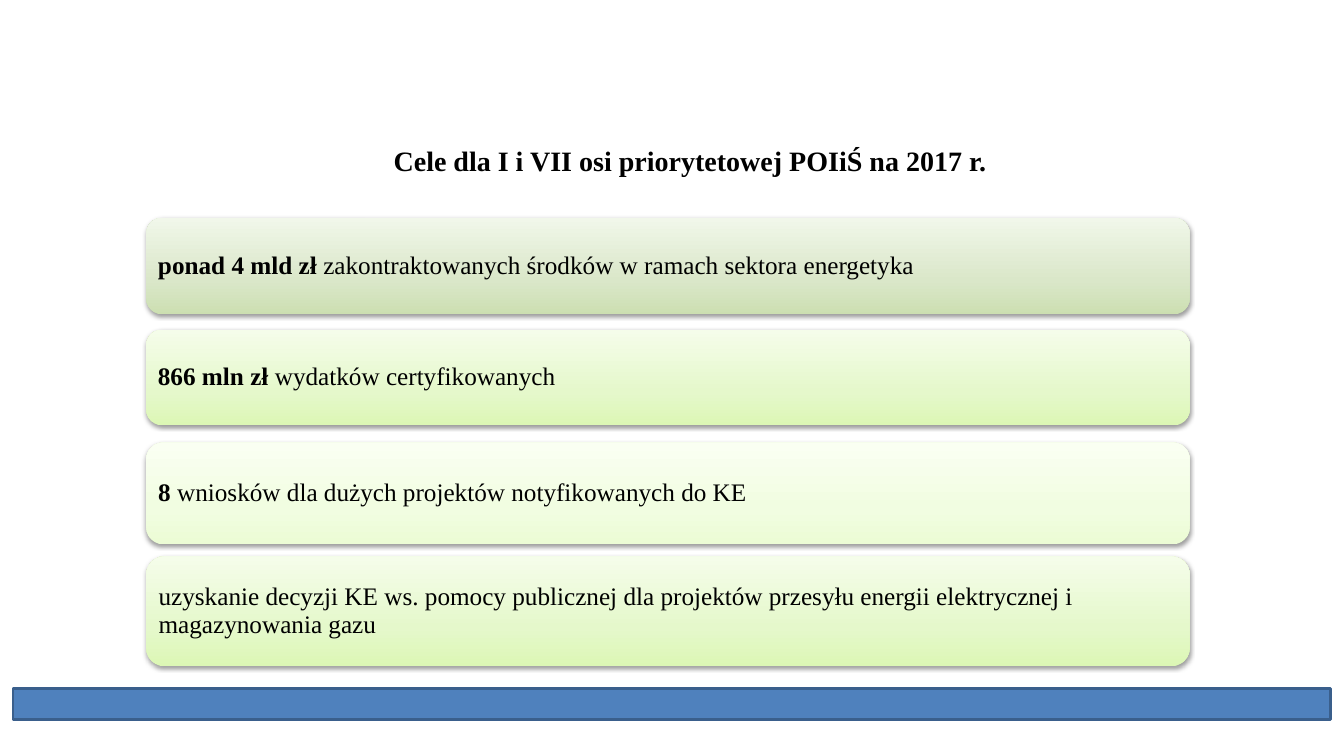
from copy import deepcopy

from lxml.etree import SubElement
from pptx import Presentation
from pptx.dml.color import RGBColor
from pptx.enum.shapes import MSO_SHAPE
from pptx.enum.text import MSO_ANCHOR, PP_ALIGN
from pptx.oxml.ns import qn
from pptx.util import Inches, Pt

FONT = "Times New Roman"
BLACK = RGBColor(0, 0, 0)
BLUE = RGBColor(0x4F, 0x81, 0xBD)
NAVY = RGBColor(0x3A, 0x5F, 0x8C)
SAGE = (RGBColor(0xCC, 0xDF, 0xB1), RGBColor(0xDA, 0xE7, 0xC9), RGBColor(0xF1, 0xF7, 0xEA))
LIME = (RGBColor(0xDC, 0xF7, 0xB5), RGBColor(0xE5, 0xF8, 0xCB), RGBColor(0xF5, 0xFD, 0xEA))
PALE = (RGBColor(0xEC, 0xFC, 0xD5), RGBColor(0xF1, 0xFD, 0xE1), RGBColor(0xFA, 0xFF, 0xF2))

GOALS = [
    (2.16, 0.96, SAGE, "ponad 4 mld zł ", "zakontraktowanych środków w ramach sektora energetyka"),
    (3.27, 0.95, LIME, "866 mln zł ", "wydatków certyfikowanych"),
    (4.39, 1.01, PALE, "8 ", "wniosków dla dużych projektów notyfikowanych do KE"),
    (5.52, 1.09, LIME, "", "uzyskanie decyzji KE ws. pomocy publicznej dla projektów "
                           "przesyłu energii elektrycznej i magazynowania gazu"),
]


def set_font(para, size):
    para.font.name = FONT
    para.font.size = Pt(size)
    para.font.color.rgb = BLACK


def add_shade(shape):
    shape.shadow.inherit = False
    effect = shape._element.spPr.find(qn("a:effectLst"))
    outer = SubElement(effect, qn("a:outerShdw"), blurRad=str(Pt(3.1)),
                       dist=str(Pt(1.6)), dir="5400000", rotWithShape="0")
    color = SubElement(outer, qn("a:srgbClr"), val=str(BLACK))
    SubElement(color, qn("a:alpha"), val="38000")


def fill_fade(shape, colors):
    shape.fill.gradient()
    shape.fill.gradient_angle = 90
    stops = shape._element.spPr.find(".//" + qn("a:gsLst"))
    stops.append(deepcopy(stops[0]))
    for stop, place, color in zip(shape.fill.gradient_stops, (0, 0.35, 1), colors):
        stop.position = place
        stop.color.rgb = color


def add_goal(slide, top, height, colors, lead, rest):
    card = slide.shapes.add_shape(MSO_SHAPE.ROUNDED_RECTANGLE, Inches(1.45), Inches(top),
                                  Inches(10.35), Inches(height))
    fill_fade(card, colors)
    card.line.fill.background()
    add_shade(card)
    frame = card.text_frame
    frame.word_wrap = True
    frame.vertical_anchor = MSO_ANCHOR.MIDDLE
    frame.margin_left = frame.margin_right = Inches(0.07)
    para = frame.paragraphs[0]
    para.alignment = PP_ALIGN.LEFT
    para.line_spacing = 0.9
    set_font(para, 18)
    if lead:
        run = para.add_run()
        run.text = lead
        run.font.bold = True
    para.add_run().text = rest


def add_title(slide, text):
    box = slide.shapes.add_textbox(Inches(1.17), Inches(1.37), Inches(11.35), Inches(0.44))
    box.text_frame.word_wrap = True
    para = box.text_frame.paragraphs[0]
    para.text = text
    para.alignment = PP_ALIGN.CENTER
    set_font(para, 20)
    para.font.bold = True


def add_bar(slide):
    bar = slide.shapes.add_shape(MSO_SHAPE.FLOWCHART_PROCESS, Inches(0.13), Inches(6.83),
                                 Inches(13.07), Inches(0.31))
    bar.shadow.inherit = False
    bar.fill.solid()
    bar.fill.fore_color.rgb = BLUE
    bar.line.color.rgb = NAVY
    bar.line.width = Pt(2)


def main():
    deck = Presentation()
    deck.slide_width = Inches(13.33)
    deck.slide_height = Inches(7.5)
    slide = deck.slides.add_slide(deck.slide_layouts[6])
    add_bar(slide)
    for goal in GOALS:
        add_goal(slide, *goal)
    add_title(slide, "Cele dla I i VII osi priorytetowej POIiŚ na 2017 r.")
    deck.save("out.pptx")


if __name__ == "__main__":
    main()
